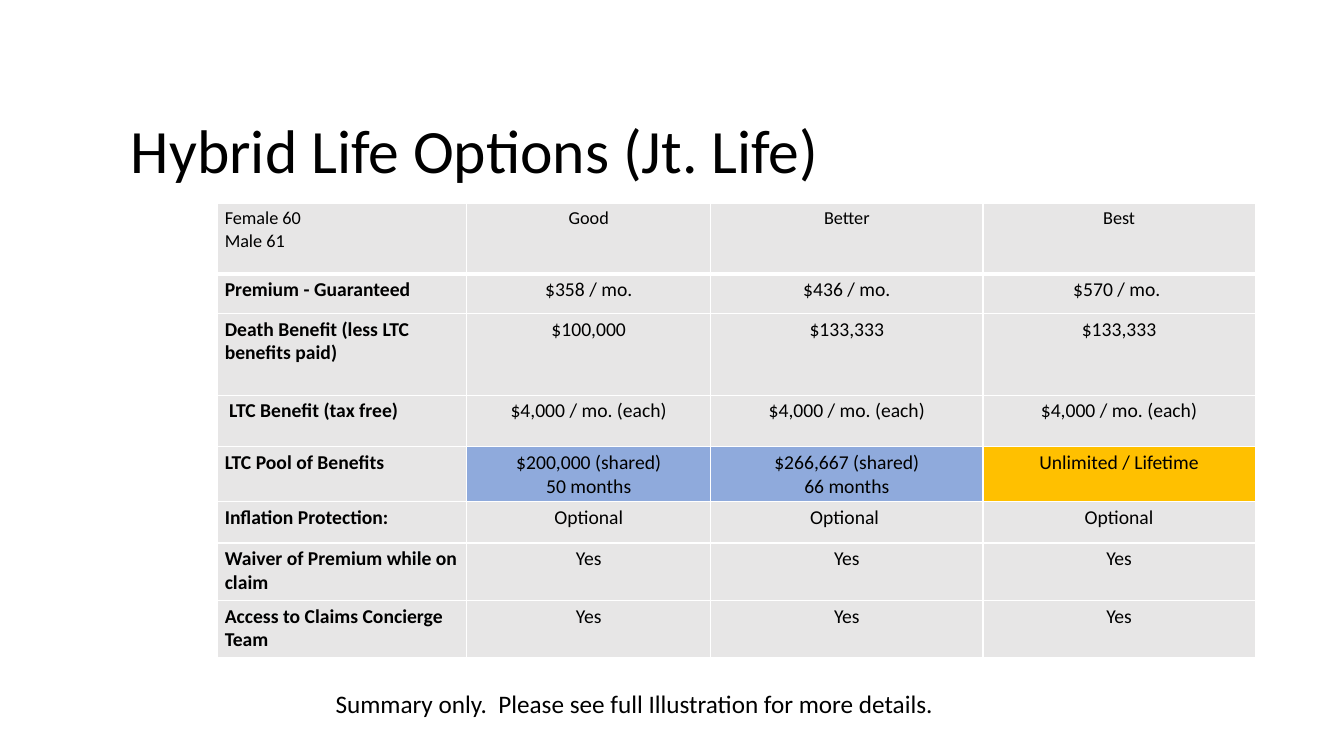
import pptx
import pptx.util
import pptx.dml.color
import pptx.enum.text
from dataclasses import dataclass
from lxml import etree
from pptx.oxml.ns import qn

Inches, Pt = pptx.util.Inches, pptx.util.Pt
ALIGN = pptx.enum.text.PP_ALIGN
ANCHOR = pptx.enum.text.MSO_ANCHOR


@dataclass(frozen=True)
class Theme:
    font: str = "Calibri"
    text: str = "000000"
    border: str = "FFFFFF"
    cell: str = "E7E6E6"
    pool: str = "8FAADC"
    unlimited: str = "FFC000"
    title_size: int = 44
    note_size: int = 18
    head_size: int = 13
    body_size: int = 14


THEME = Theme()

COL_WIDTHS = [2.47, 2.42, 2.7, 2.7]
ROW_HEIGHTS = [0.7, 0.39, 0.81, 0.51, 0.52, 0.41, 0.57, 0.57]
OPTIONS = [
    ["Female 60\nMale 61", "Good", "Better", "Best"],
    ["Premium - Guaranteed", "$358 / mo.", "$436 / mo.", "$570 / mo. "],
    ["Death Benefit (less LTC benefits paid)", "$100,000", "$133,333", "$133,333"],
    [" LTC Benefit (tax free)"] + ["$4,000 / mo. (each)"] * 3,
    ["LTC Pool of Benefits", "$200,000 (shared)\n50 months",
     "$266,667 (shared)\n66 months", "Unlimited / Lifetime"],
    ["Inflation Protection:", "Optional", "Optional ", "Optional"],
    ["Waiver of Premium while on claim"] + ["Yes"] * 3,
    ["Access to Claims Concierge Team"] + ["Yes"] * 3,
]
HIGHLIGHTS = {(4, 1): THEME.pool, (4, 2): THEME.pool, (4, 3): THEME.unlimited}


def rgb(value):
    return pptx.dml.color.RGBColor.from_string(value)


def write(tf, text, size, bold=False, align=ALIGN.LEFT):
    tf.text = text
    for p in tf.paragraphs:
        p.alignment = align
        for r in p.runs:
            r.font.name = THEME.font
            r.font.size = Pt(size)
            r.font.bold = bold
            r.font.color.rgb = rgb(THEME.text)


def set_borders(cell, bottom):
    tcPr = cell._tc.get_or_add_tcPr()
    for side, width in (("L", 1), ("R", 1), ("T", 1), ("B", bottom)):
        ln = etree.SubElement(tcPr, qn(f"a:ln{side}"), w=str(Pt(width)))
        fill = etree.SubElement(ln, qn("a:solidFill"))
        etree.SubElement(fill, qn("a:srgbClr"), val=THEME.border)


def add_title(s, box, text):
    tf = s.shapes.add_textbox(*map(Inches, box)).text_frame
    tf.word_wrap = True
    tf.vertical_anchor = ANCHOR.BOTTOM
    write(tf, text, THEME.title_size)
    tf.paragraphs[0].line_spacing = 0.9


def add_options_table(s, box):
    table = s.shapes.add_table(len(OPTIONS), len(COL_WIDTHS), *map(Inches, box)).table
    table.first_row = table.horz_banding = False
    for column, width in zip(table.columns, COL_WIDTHS):
        column.width = Inches(width)
    for row, height in zip(table.rows, ROW_HEIGHTS):
        row.height = Inches(height)

    for i, texts in enumerate(OPTIONS):
        for j, text in enumerate(texts):
            cell = table.cell(i, j)
            cell.margin_left = cell.margin_right = Inches(0.07)
            cell.margin_top = cell.margin_bottom = Inches(0.04)
            # The header row has a heavier rule below it
            set_borders(cell, bottom=1 if i else 3)
            cell.fill.solid()
            cell.fill.fore_color.rgb = rgb(HIGHLIGHTS.get((i, j), THEME.cell))
            write(cell.text_frame, text,
                  size=THEME.body_size if i else THEME.head_size,
                  bold=i > 0 and j == 0,
                  align=ALIGN.CENTER if j else ALIGN.LEFT)


def add_note(s, box, text):
    tf = s.shapes.add_textbox(*map(Inches, box)).text_frame
    tf.word_wrap = False
    tf.auto_size = pptx.enum.text.MSO_AUTO_SIZE.SHAPE_TO_FIT_TEXT
    write(tf, text, THEME.note_size)


def main():
    prs = pptx.Presentation()
    prs.slide_width, prs.slide_height = Inches(13.33), Inches(7.5)
    s = prs.slides.add_slide(prs.slide_layouts[6])

    # Title, comparison table and closing note
    add_title(s, (1.2, 0.31, 11, 1.59), "Hybrid Life Options (Jt. Life)")
    add_options_table(s, (2.16, 2.02, sum(COL_WIDTHS), sum(ROW_HEIGHTS)))
    add_note(s, (3.23, 6.78, 6.2, 0.4),
             "Summary only.  Please see full Illustration for more details.")
    prs.save("out.pptx")


if __name__ == "__main__":
    main()
